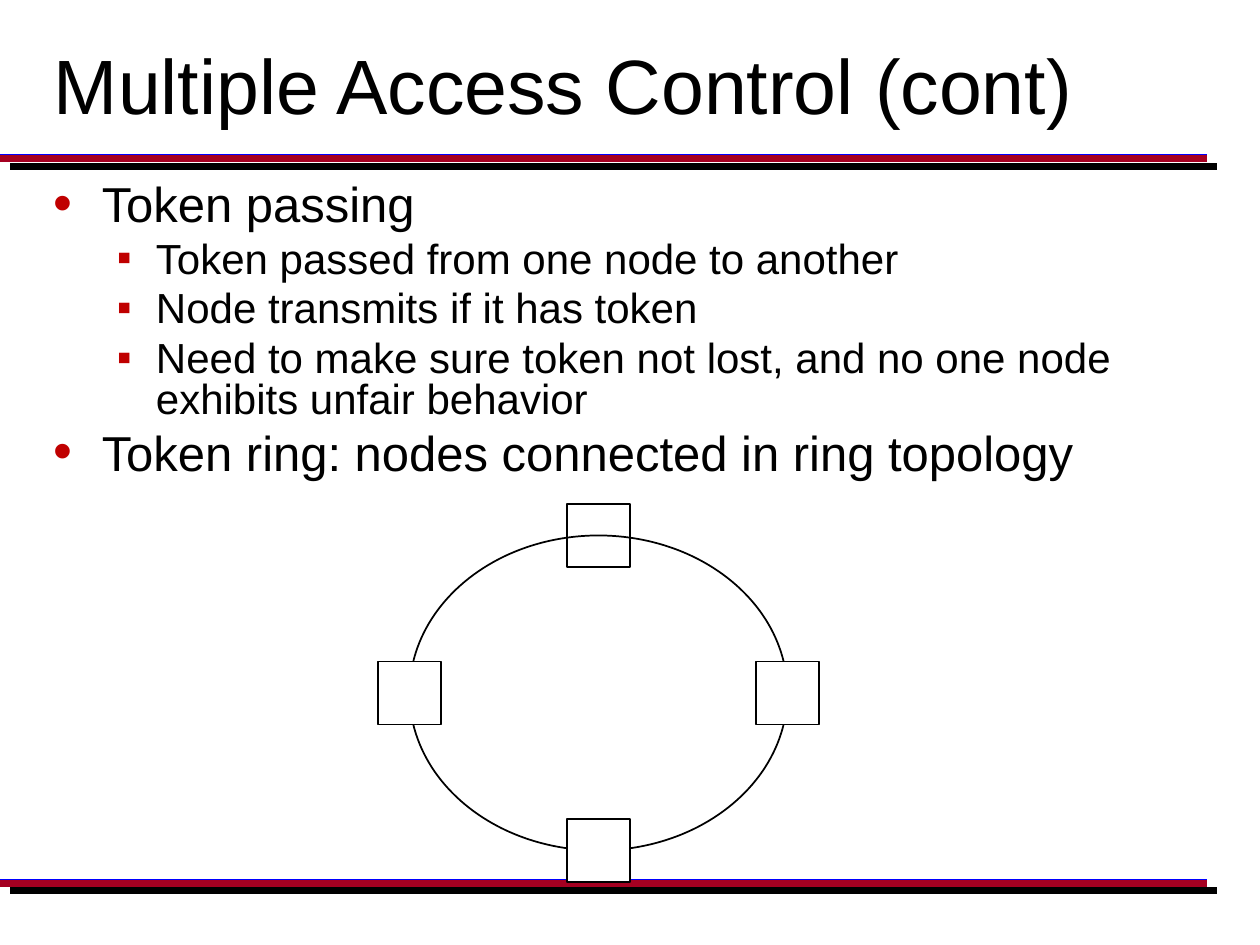
from lxml import etree
from pptx import Presentation
from pptx.dml.color import RGBColor
from pptx.enum import shapes, text
from pptx.oxml import ns
from pptx.util import Inches, Pt

TITLE = "Multiple Access Control (cont)"
BODY = [  # (level, wording)
    (0, "Token passing"),
    (1, "Token passed from one node to another"),
    (1, "Node transmits if it has token"),
    (1, "Need to make sure token not lost, and no one node exhibits unfair behavior"),
    (0, "Token ring: nodes connected in ring topology"),
]
LEVELS = [
    dict(size=28, before=6.4, margin=0.38, hang=0.38, bullet="•", bullet_size=110),
    dict(size=24, before=5.5, margin=0.81, hang=0.31, bullet="▪", bullet_size=100),
]
RULES = [("0000FF", 0, True), ("A50021", 0.01, False)]  # colour, drop, shadow
RULE_TOPS = (1.25, 7)
RULE_LENGTH = 9.58
RING = dict(x=4.75, y=5.5, width=3, height=2.5)  # centre and size
NODE = 0.5


def color(value):
    return RGBColor.from_string(value)


def add_xml(parent, tag, **attributes):
    return etree.SubElement(parent, ns.qn(tag), attributes)


def format_font(font, size):
    values = dict(name="Arial", size=Pt(size))
    for key, value in values.items():
        setattr(font, key, value)
    font.color.rgb = color("000000")


def add_rule(slide, top, line_color, shadowed):
    rule = slide.shapes.add_connector(
        shapes.MSO_CONNECTOR.STRAIGHT,
        Inches(0), Inches(top), Inches(RULE_LENGTH), Inches(top))
    rule.line.color.rgb = color(line_color)
    rule.line.width = Pt(4)
    effects = add_xml(rule._element.spPr, "a:effectLst")
    if shadowed:
        shadow = add_xml(effects, "a:outerShdw", dist=str(Pt(7.8)),
                         dir=str(40 * 60000), algn="ctr", rotWithShape="0")
        add_xml(shadow, "a:srgbClr", val="000000")


def add_text_frame(slide, top, height, anchor):
    frame = slide.shapes.add_textbox(
        Inches(0.33), Inches(top), Inches(9.17), Inches(height)).text_frame
    frame.word_wrap = True
    frame.vertical_anchor = anchor
    return frame


def add_bullet(paragraph, level):
    properties = paragraph._p.get_or_add_pPr()
    properties.set("marL", str(Inches(level["margin"])))
    properties.set("indent", str(-Inches(level["hang"])))
    add_xml(add_xml(properties, "a:buClr"), "a:srgbClr", val="C00000")
    add_xml(properties, "a:buSzPct", val=str(level["bullet_size"] * 1000))
    add_xml(properties, "a:buFont", typeface="Arial")
    add_xml(properties, "a:buChar", char=level["bullet"])


def add_outline(slide, kind, x, y, width, height, fill=None):
    shape = slide.shapes.add_shape(
        kind, Inches(x - width / 2), Inches(y - height / 2),
        Inches(width), Inches(height))
    shape.shadow.inherit = False
    if fill:
        shape.fill.solid()
        shape.fill.fore_color.rgb = color(fill)
    else:
        shape.fill.background()
    shape.line.color.rgb = color("000000")
    shape.line.width = Pt(1)


def main():
    deck = Presentation()
    deck.slide_width, deck.slide_height = Inches(10), Inches(7.5)
    slide = deck.slides.add_slide(deck.slide_layouts[6])

    # Double rules under the title and at the foot
    for line_color, drop, shadowed in RULES:
        for top in RULE_TOPS:
            add_rule(slide, top + drop, line_color, shadowed)

    # Title
    heading = add_text_frame(slide, 0, 1.33, text.MSO_ANCHOR.MIDDLE).paragraphs[0]
    heading.text = TITLE
    format_font(heading.font, 44)

    # Bulleted body
    body = add_text_frame(slide, 1.42, 2.5, text.MSO_ANCHOR.TOP)
    for index, (depth, wording) in enumerate(BODY):
        level = LEVELS[depth]
        paragraph = body.add_paragraph() if index else body.paragraphs[0]
        paragraph.text = wording
        paragraph.level = depth
        paragraph.line_spacing = 0.8
        paragraph.space_before = Pt(level["before"] if index else 0)
        add_bullet(paragraph, level)
        format_font(paragraph.font, level["size"])

    # Ring with a node on each side; the top node lies behind the ring
    x, y = RING["x"], RING["y"]
    dx, dy = RING["width"] / 2, RING["height"] / 2
    top_node, *other_nodes = [(x, y - dy), (x - dx, y), (x + dx, y), (x, y + dy)]
    square = shapes.MSO_SHAPE.RECTANGLE
    add_outline(slide, square, *top_node, NODE, NODE, "FFFFFF")
    add_outline(slide, shapes.MSO_SHAPE.OVAL, **RING)
    for node in other_nodes:
        add_outline(slide, square, *node, NODE, NODE, "FFFFFF")

    deck.save("out.pptx")


if __name__ == "__main__":
    main()
